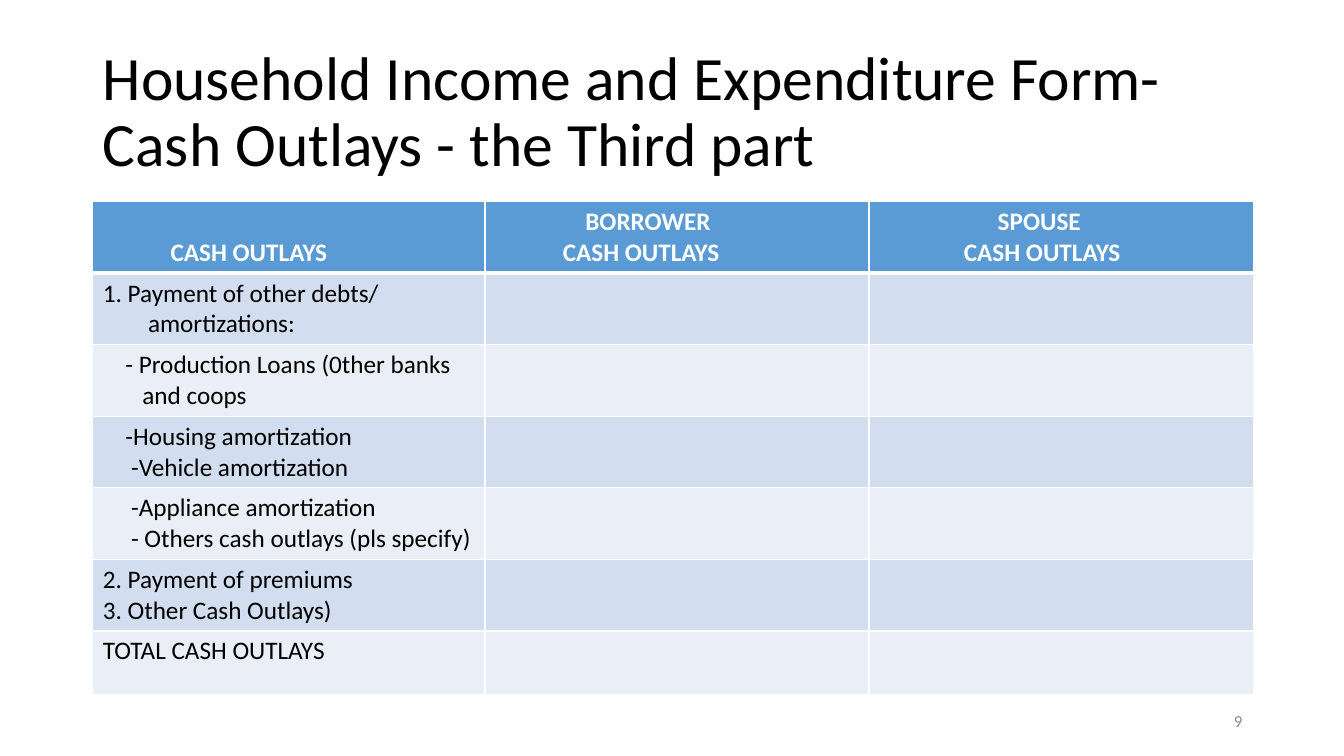
"""Build the cash outlays page of the household income and expenditure form."""
from dataclasses import dataclass

from lxml.etree import SubElement
from pptx import Presentation
from pptx.dml.color import RGBColor
from pptx.enum.text import MSO_ANCHOR as Anchor, PP_ALIGN as Align
from pptx.oxml.ns import qn
from pptx.util import Inches, Pt


@dataclass(frozen=True)
class Theme:
    """Fonts, type sizes and colours of the page."""
    font: str = "Calibri"
    title_size: int = 44
    table_size: int = 18
    number_size: int = 12
    ink: str = "000000"
    muted: str = "8C8C8C"
    white: str = "FFFFFF"
    header: str = "5B9BD5"
    bands: tuple = ("D2DEEF", "EAEFF7")


THEME = Theme()
INDENT_STEP = 0.056
COLUMN_WIDTHS = (3.89, 3.81, 3.81)
ROW_HEIGHT = 0.71
TOTAL_HEIGHT = 0.63

HEADERS = (
    [(12, "CASH OUTLAYS")],
    [(16, "BORROWER"), (12, "CASH OUTLAYS")],
    [(21, "SPOUSE"), (15, "CASH OUTLAYS")],
)
OUTLAYS = (
    [(0, "1. Payment of other debts/"), (8, "amortizations:")],
    [(4, "- Production Loans (0ther banks"), (7, "and coops")],
    [(4, "-Housing amortization"), (5, "-Vehicle amortization")],
    [(5, "-Appliance amortization"), (5, "- Others cash outlays (pls specify)")],
    [(0, "2. Payment of premiums"), (0, "3. Other Cash Outlays)")],
    [(0, "TOTAL CASH OUTLAYS")],
)


def style(para, size, color, bold=False):
    """Set the font of a whole paragraph."""
    font = para.font
    font.name, font.size, font.bold = THEME.font, Pt(size), bold
    font.color.rgb = RGBColor.from_string(color)


def add_text(page, text, place, size, color, align=Align.LEFT, spacing=1.0):
    """Add a wrapped, vertically centred text box."""
    box = page.shapes.add_textbox(*map(Inches, place))
    frame = box.text_frame
    frame.word_wrap = True
    frame.vertical_anchor = Anchor.MIDDLE
    para = frame.paragraphs[0]
    para.text = text
    para.alignment = align
    para.line_spacing = spacing
    style(para, size, color)


def add_borders(cell, top, bottom):
    """Draw white borders, with the given top and bottom widths in points."""
    properties = cell._tc.get_or_add_tcPr()
    sides = {"a:lnL": 1, "a:lnR": 1, "a:lnT": top, "a:lnB": bottom}
    for index, (tag, width) in enumerate(sides.items()):
        line = SubElement(properties, qn(tag), w=str(Pt(width)))
        fill = SubElement(line, qn("a:solidFill"))
        SubElement(fill, qn("a:srgbClr"), val=THEME.white)
        properties.insert(index, line)


def fill_cell(cell, lines, fill, color, bold=False, top=1, bottom=1):
    """Write indented lines into a cell and set its fill and borders."""
    cell.fill.solid()
    cell.fill.fore_color.rgb = RGBColor.from_string(fill)
    add_borders(cell, top, bottom)
    frame = cell.text_frame
    for index, (steps, text) in enumerate(lines):
        para = frame.add_paragraph() if index else frame.paragraphs[0]
        para.text = text
        para._p.get_or_add_pPr().set("marL", str(Inches(steps * INDENT_STEP)))
        style(para, THEME.table_size, color, bold)


def add_outlay_table(page):
    """Add the form with one header row and banded outlay rows."""
    heights = [ROW_HEIGHT] * len(OUTLAYS) + [TOTAL_HEIGHT]
    place = map(Inches, (0.92, 2, sum(COLUMN_WIDTHS), sum(heights)))
    table = page.shapes.add_table(len(heights), len(COLUMN_WIDTHS), *place).table
    for column, width in zip(table.columns, COLUMN_WIDTHS):
        column.width = Inches(width)
    for row, height in zip(table.rows, heights):
        row.height = Inches(height)

    for cell, lines in zip(table.rows[0].cells, HEADERS):
        fill_cell(cell, lines, THEME.header, THEME.white, bold=True, bottom=3)
        cell.vertical_anchor = Anchor.BOTTOM
    for index, lines in enumerate(OUTLAYS):
        band = THEME.bands[index % 2]
        top = 1 if index else 3
        for cell, content in zip(table.rows[index + 1].cells, (lines, [], [])):
            fill_cell(cell, content, band, THEME.ink, top=top)


def main():
    """Build and save the deck."""
    deck = Presentation()
    deck.slide_width, deck.slide_height = Inches(13.33), Inches(7.5)
    page = deck.slides.add_slide(deck.slide_layouts[6])
    add_text(page, "Household Income and Expenditure Form-\vCash Outlays - the Third part",
             (0.92, 0.4, 11.5, 1.45), THEME.title_size, THEME.ink, spacing=0.9)
    add_outlay_table(page)
    add_text(page, "9", (9.42, 6.95, 3, 0.4), THEME.number_size, THEME.muted, Align.RIGHT)
    deck.save("out.pptx")


if __name__ == "__main__":
    main()
